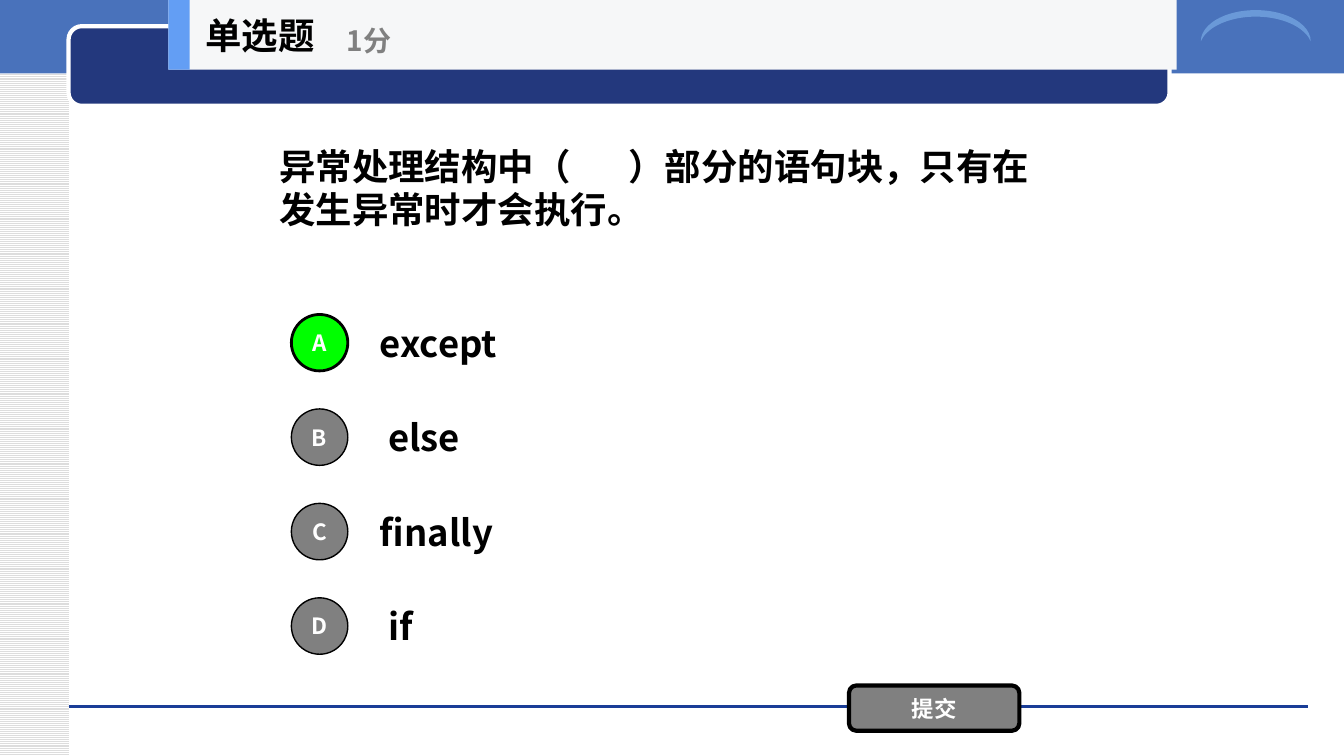
from pptx import Presentation
from pptx.dml.color import RGBColor
from pptx.enum import dml, shapes, text
from pptx.oxml import ns
from pptx.util import Inches, Pt
from lxml import etree

FONT = "Noto Sans CJK SC"
PRESET = shapes.MSO_SHAPE
LEFT, CENTER = text.PP_ALIGN.LEFT, text.PP_ALIGN.CENTER

QUESTION = "异常处理结构中（       ）部分的语句块，只有在发生异常时才会执行。"
OPTIONS = [("A", "except"), ("B", " else"), ("C", "finally"), ("D", " if")]
CORRECT = "A"
SUBMIT = "提交"
HEADINGS = [
    ("单选题", (1.94, 0, 2.08, 0.69), 26, "000000"),
    ("1分", (3.34, 0.12, 2.5, 0.56), 20, "808080"),
]
QUESTION_BOX = (2.67, 0.69, 8, 2.34)
SUBMIT_BOX = (8.42, 6.8, 1.69, 0.45)
FOOTER_RULE = (0.68, 7.01, 12.97, 7.01)
OPTION_TOP, OPTION_PITCH, OPTION_HEIGHT = 3.05, 0.937, 0.7
OPTION_LEFT, OPTION_WIDTH = 3.67, 7
BADGE_LEFT, BADGE_SIZE = 2.89, 0.56


def color(value):
    return RGBColor.from_string(value)


def inches(box):
    return [Inches(length) for length in box]


def write(holder, words, size, ink, align=LEFT, inset=(0.1, 0.05)):
    frame = holder.text_frame
    side, end = inches(inset)
    layout = {
        "word_wrap": True, "auto_size": text.MSO_AUTO_SIZE.NONE,
        "vertical_anchor": text.MSO_ANCHOR.MIDDLE,
        "margin_left": side, "margin_right": side,
        "margin_top": end, "margin_bottom": end,
    }
    for key, value in layout.items():
        setattr(frame, key, value)
    paragraph = frame.paragraphs[0]
    paragraph.alignment = align
    run = paragraph.add_run()
    run.text = words
    for key, value in {"name": FONT, "size": Pt(size), "bold": True}.items():
        setattr(run.font, key, value)
    run.font.color.rgb = color(ink)
    east_asian = etree.SubElement(run.font._element, ns.qn("a:ea"))
    east_asian.set("typeface", FONT)


def draw(preset, box, fill, line=None, width=0):
    figure = slide.shapes.add_shape(preset, *inches(box))
    figure.shadow.inherit = False
    figure.fill.solid()
    figure.fill.fore_color.rgb = color(fill)
    if line:
        figure.line.color.rgb = color(line)
        figure.line.width = Pt(width)
    else:
        figure.line.fill.background()
    return figure


def label(words, box, size, ink):
    write(slide.shapes.add_textbox(*inches(box)), words, size, ink)


deck = Presentation()
deck.slide_width, deck.slide_height = inches((13.33, 7.5))
slide = deck.slides.add_slide(deck.slide_layouts[5])

question = slide.shapes.title
for side, length in zip(("left", "top", "width", "height"), inches(QUESTION_BOX)):
    setattr(question, side, length)
write(question, QUESTION, 26, "000000")

margin = draw(PRESET.RECTANGLE, (0, 0, 0.68, 7.5), "FFFFFF")
margin.fill.patterned()
margin.fill.pattern = dml.MSO_PATTERN.LIGHT_HORIZONTAL
margin.fill.fore_color.rgb = color("DDDDDD")
margin.fill.back_color.rgb = color("FFFFFF")

draw(PRESET.RECTANGLE, (0, -0.03, 13.33, 0.76), "4972BB")

footer_rule = slide.shapes.add_connector(shapes.MSO_CONNECTOR.STRAIGHT, *inches(FOOTER_RULE))
footer_rule.line.color.rgb = color("1A3D97")
footer_rule.line.width = Pt(0)
etree.SubElement(footer_rule._element.spPr, ns.qn("a:effectLst"))

draw(PRESET.ROUNDED_RECTANGLE, (0.68, 0.26, 10.92, 0.79), "23387D", "FFFFFF", 3)
crescent = draw(PRESET.MOON, (12.3, -0.29, 0.31, 1.09), "6A99D8")
crescent.rotation = 90
crescent.adjustments[0] = 0.21

for row, (letter, answer) in enumerate(OPTIONS):
    top = OPTION_TOP + row * OPTION_PITCH
    label(answer, (OPTION_LEFT, top, OPTION_WIDTH, OPTION_HEIGHT), 26, "000000")
    badge_top = top + (OPTION_HEIGHT - BADGE_SIZE) / 2
    fill, width = ("00FF00", 2) if letter == CORRECT else ("808080", 1)
    badge = draw(PRESET.OVAL, (BADGE_LEFT, badge_top, BADGE_SIZE, BADGE_SIZE), fill, "000000", width)
    write(badge, letter, 16, "FFFFFF", CENTER, (0, 0))

submit = draw(PRESET.ROUNDED_RECTANGLE, SUBMIT_BOX, "808080", "000000", 3)
write(submit, SUBMIT, 16, "FFFFFF", CENTER, (0, 0))

draw(PRESET.RECTANGLE, (1.67, 0, 10, 0.69), "F6F7F8")
draw(PRESET.RECTANGLE, (1.67, 0, 0.21, 0.69), "639EF4")
for heading in HEADINGS:
    label(*heading)

deck.save("out.pptx")
